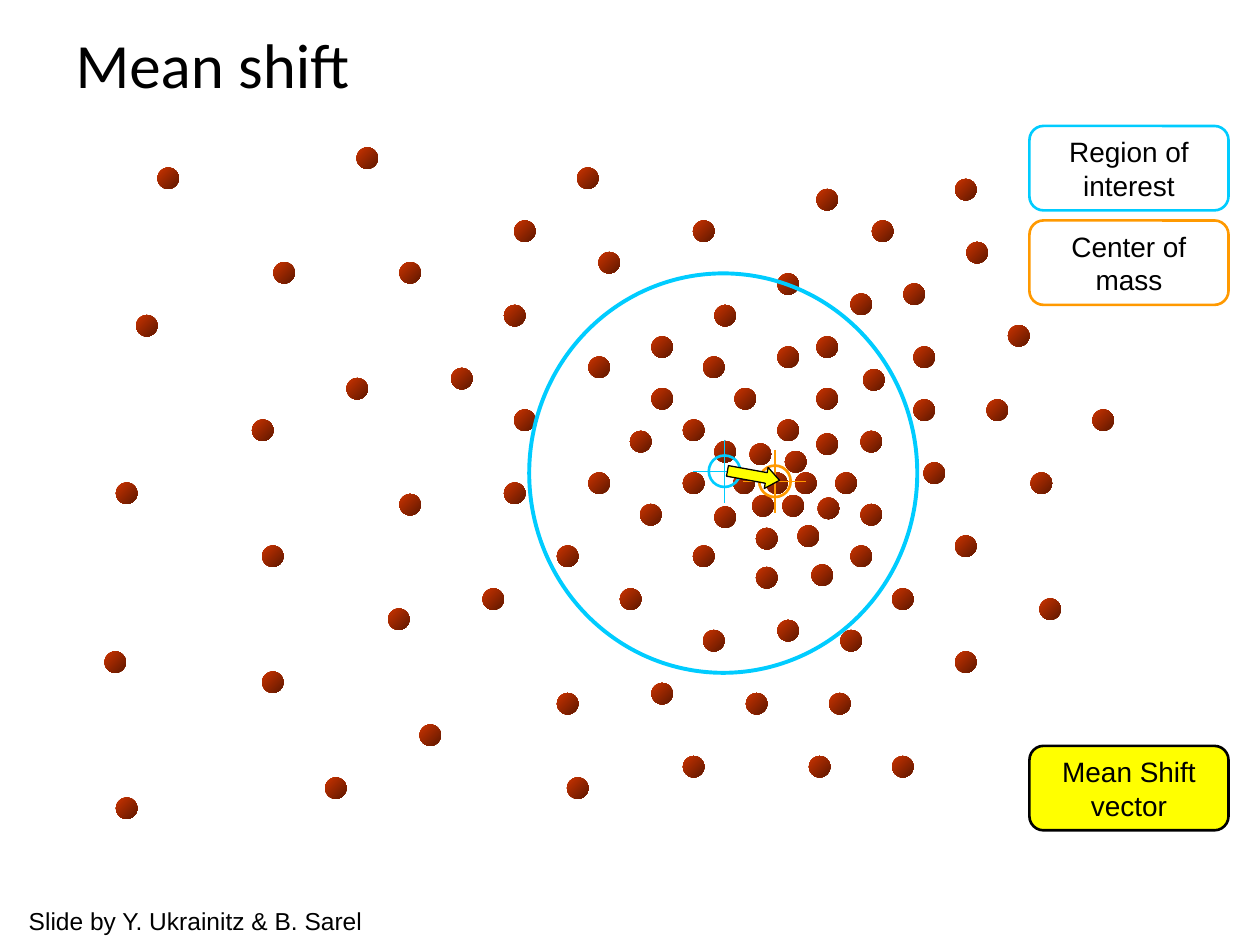
import pptx
import pptx.util
import pptx.dml.color
import pptx.enum.shapes
import pptx.enum.text
import pptx.oxml
import pptx.oxml.ns

Inches = pptx.util.Inches
Shape = pptx.enum.shapes.MSO_SHAPE
Anchor = pptx.enum.text.MSO_ANCHOR
Align = pptx.enum.text.PP_ALIGN

# Content
TITLE = "Mean shift"
CREDIT = "Slide by Y. Ukrainitz & B. Sarel"
LABELS = [  # lines, top, fill, line colour
    (["Region of", "interest"], 1.0, None, "region"),
    (["Center of", "mass"], 1.75, None, "mass"),
    (["Mean Shift", "vector"], 5.92, "vector", "ink"),
]
REGION = (4.2, 2.17, 3.08, 3.17)
VECTOR = (5.77, 3.69, 0.42, 0.17)
REGION_CENTER = (5.75, 3.74)
MASS_CENTER = (6.15, 3.82)
SAMPLES = [  # left and top of each data point
    (6.08, 3.75), (6.31, 3.75), (6.23, 3.58), (5.95, 3.52), (6.21, 3.93), (5.97, 3.93),
    (6.49, 3.95), (5.82, 3.75), (6.63, 3.75), (6.48, 3.44), (6.17, 3.33), (6.33, 4.17),
    (6, 4.19), (5.67, 4.02), (5.42, 3.75), (5.67, 3.5), (6.83, 4), (6.75, 4.33),
    (6.44, 4.48), (6, 4.5), (5.5, 4.33), (5.08, 4), (5, 3.42), (5.42, 3.33),
    (5.83, 3.08), (6.48, 3.08), (6.17, 2.75), (5.17, 3.08), (5.58, 2.83), (6.17, 2.17),
    (5.67, 2.42), (6.48, 2.67), (6.48, 1.5), (6.75, 2.33), (6.85, 2.93), (6.83, 3.42),
    (7.25, 3.17), (7.25, 2.75), (7.17, 2.25), (6.92, 1.75), (7.58, 1.42), (7.67, 1.92),
    (8, 2.58), (7.33, 3.67), (7.83, 3.17), (8.67, 3.25), (7.58, 4.25), (8.18, 3.75),
    (7.08, 4.67), (8.25, 4.75), (7.58, 5.17), (6.67, 5), (6.17, 4.92), (6.58, 5.5),
    (7.08, 6), (6.42, 6), (5.92, 5.5), (5.58, 5), (4.92, 4.67), (5.17, 5.42),
    (5.42, 6), (4.5, 6.17), (4.42, 5.5), (3.83, 4.67), (4.42, 4.33), (4.67, 3.75),
    (4.08, 3.25), (4.67, 2.83), (5.17, 2.67), (4.75, 2), (5.5, 1.75), (4.58, 1.33),
    (4.08, 1.75), (4, 2.42), (3.58, 2.92), (4, 3.83), (3.17, 3.92), (3.08, 4.83),
    (3.33, 5.75), (2.58, 6.17), (2.08, 5.33), (2.08, 4.33), (2.75, 3), (3.17, 2.08),
    (2.17, 2.08), (2, 3.33), (0.83, 5.17), (0.92, 6.33), (0.92, 3.83), (1.08, 2.5),
    (1.25, 1.33), (2.83, 1.17),
]
SAMPLE_SIZE = 0.17
MARK_RADIUS, MARK_ARM = 0.125, 0.25

THEME = {
    "ink": "000000", "region": "00CCFF", "mass": "FF9900", "vector": "FFFF00",
    "sample": "CC3300", "sample_dark": "5E1800",
    "title_size": 36, "label_size": 16, "credit_size": 14,
    "title_font": "Calibri", "body_font": "Arial",
}


def color(key):
    return pptx.dml.color.RGBColor.from_string(THEME[key])


def write(frame, lines, size, font="body_font", align=Align.LEFT,
          anchor=Anchor.MIDDLE, wrap=False):
    frame.word_wrap = wrap
    frame.vertical_anchor = anchor
    for i, line in enumerate(lines):
        paragraph = frame.paragraphs[0] if i == 0 else frame.add_paragraph()
        paragraph.alignment = align
        run = paragraph.add_run()
        run.text = line
        run.font.name = THEME[font]
        run.font.size = pptx.util.Pt(THEME[size])
        run.font.color.rgb = color("ink")


def add_outline(shapes, kind, box, line=None, width=1.5, fill=None):
    shape = shapes.add_shape(kind, *map(Inches, box))
    shape.shadow.inherit = False
    if fill:
        shape.fill.solid()
        shape.fill.fore_color.rgb = color(fill)
    else:
        shape.fill.background()
    if line:
        shape.line.color.rgb = color(line)
        shape.line.width = pptx.util.Pt(width)
    else:
        shape.line.fill.background()
    return shape


def add_mark(shapes, center, line):
    """Small circle with a cross through its centre."""
    x, y = center
    add_outline(shapes, Shape.OVAL, (x - MARK_RADIUS, y - MARK_RADIUS,
                                     2 * MARK_RADIUS, 2 * MARK_RADIUS), line)
    for dx, dy in ((0, MARK_ARM), (MARK_ARM, 0)):
        arm = shapes.add_connector(
            pptx.enum.shapes.MSO_CONNECTOR.STRAIGHT,
            Inches(x - dx), Inches(y - dy), Inches(x + dx), Inches(y + dy))
        arm.line.color.rgb = color(line)
        arm.line.width = pptx.util.Pt(0.75)
        arm._element.spPr.append(
            pptx.oxml.parse_xml("<a:effectLst %s/>" % pptx.oxml.ns.nsdecls("a")))


def main():
    deck = pptx.Presentation()
    deck.slide_width, deck.slide_height = Inches(10), Inches(7.5)
    slide = deck.slides.add_slide(deck.slide_layouts[5])
    shapes = slide.shapes

    # Title
    title = shapes.title
    title.left, title.top, title.width, title.height = map(Inches, (0.5, 0, 9, 1))
    write(title.text_frame, [TITLE], "title_size", font="title_font", wrap=True)

    # Data points
    for left, top in SAMPLES:
        sample = add_outline(shapes, Shape.OVAL, (left, top, SAMPLE_SIZE, SAMPLE_SIZE))
        sample.fill.gradient()
        sample.fill.gradient_angle = 315
        for stop, key in zip(sample.fill.gradient_stops, ("sample", "sample_dark")):
            stop.color.rgb = color(key)

    # Region of interest with its centre
    region = shapes.add_group_shape().shapes
    add_outline(region, Shape.OVAL, REGION, "region", 2.25)
    add_mark(region, REGION_CENTER, "region")

    # Labels
    for lines, top, fill, line in LABELS:
        label = add_outline(shapes, Shape.ROUNDED_RECTANGLE,
                            (8.17, top, 1.58, 0.67), line, fill=fill)
        write(label.text_frame, lines, "label_size", align=Align.CENTER)

    # Centre of mass and mean shift vector
    add_mark(shapes.add_group_shape().shapes, MASS_CENTER, "mass")
    vector = add_outline(shapes, Shape.RIGHT_ARROW, VECTOR, "ink", 0.75, "vector")
    vector.adjustments[0], vector.adjustments[1] = 0.5, 0.63
    vector.rotation = 10.3

    # Credit
    credit = shapes.add_textbox(*map(Inches, (0.13, 7.14, 2.87, 0.33)))
    write(credit.text_frame, [CREDIT], "credit_size", anchor=Anchor.TOP)
    credit.text_frame.auto_size = pptx.enum.text.MSO_AUTO_SIZE.SHAPE_TO_FIT_TEXT

    deck.save("out.pptx")


if __name__ == "__main__":
    main()
